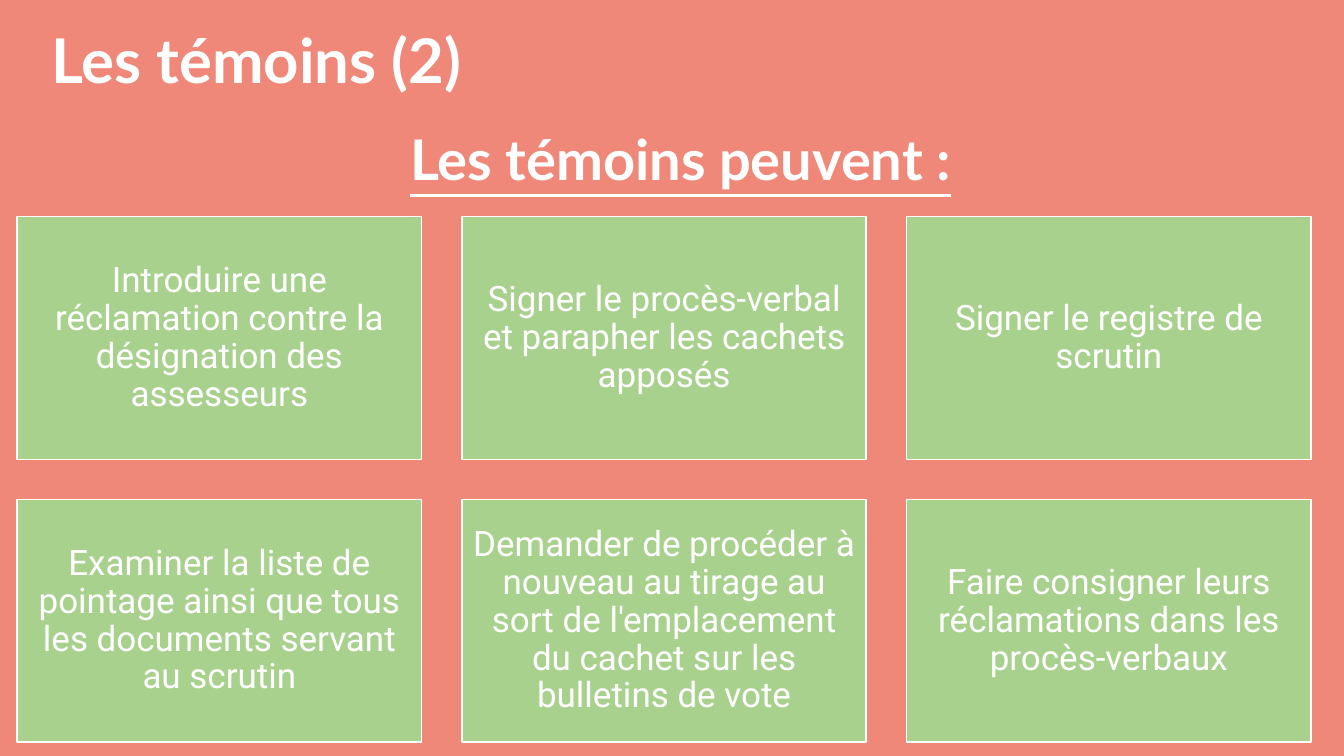
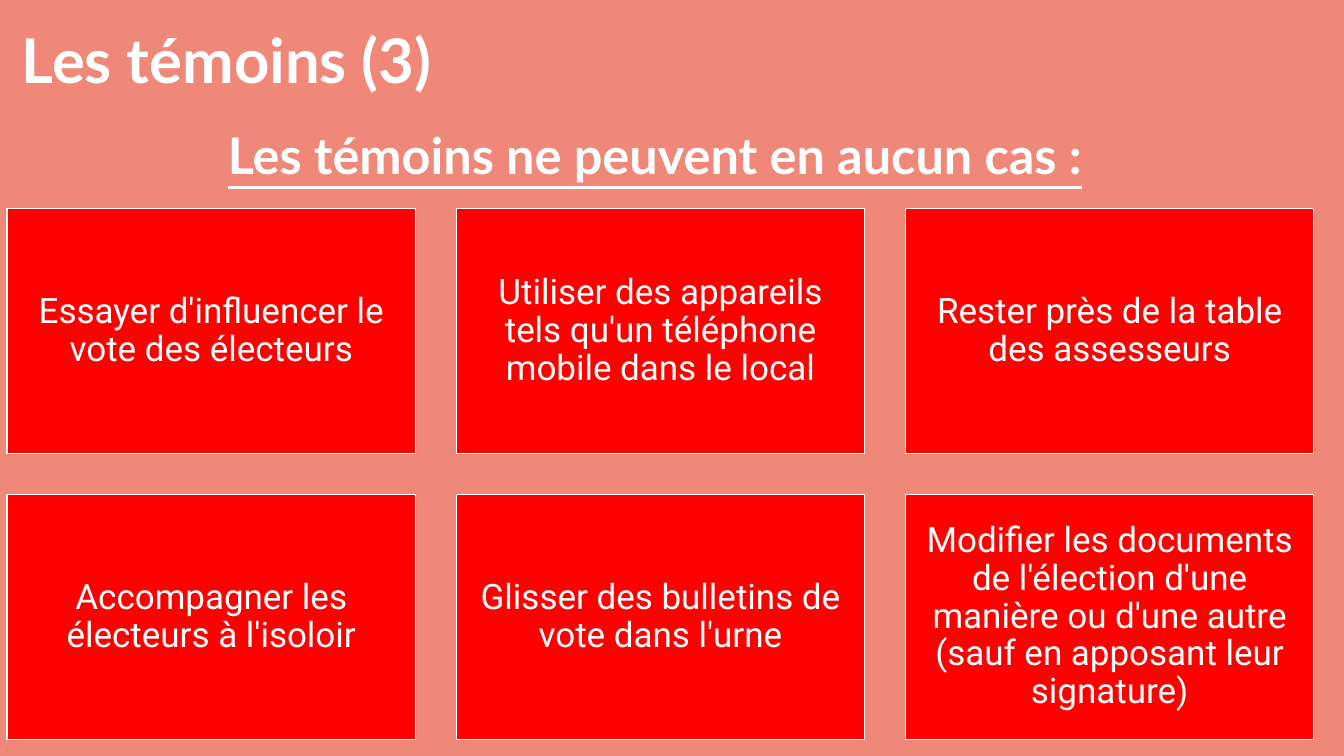
from pptx import Presentation
from pptx.dml.color import RGBColor
from pptx.enum.shapes import MSO_SHAPE
from pptx.enum.text import MSO_ANCHOR, MSO_AUTO_SIZE, PP_ALIGN
from pptx.util import Inches, Pt

RECTANGLE = MSO_SHAPE.RECTANGLE
CENTER = PP_ALIGN.CENTER
BOTTOM, MIDDLE = MSO_ANCHOR.BOTTOM, MSO_ANCHOR.MIDDLE
NO_AUTOFIT = MSO_AUTO_SIZE.NONE

# Shared look
BACKGROUND, WHITE = "EF8879", "FFFFFF"
TITLE_FONT = {"name": "Lato", "size": Pt(44), "bold": True}
HEADING_FONT = {"name": "Lato", "bold": True, "underline": True}
CARD_FONT = {"name": "Roboto", "size": Pt(25)}
COLUMNS = 3
CARD_RATIO = 0.6  # height relative to width
GAP_RATIO = 0.1  # gap relative to width

# Slide content
SLIDES = [
    {
        "title": "Les témoins (2)",
        "title_width": 5.09,
        "heading": "Les témoins peuvent :",
        "heading_box": (0.42, 1.27, 12.66, 0.68),
        "heading_size": 40,
        "heading_spacing": 0.8,
        "card_color": "A9D18E",
        "card_origin": (0.17, 2.15),
        "card_width": 4.01,
        "cards": [
            "Introduire une réclamation contre la désignation des assesseurs",
            "Signer le procès-verbal et parapher les cachets apposés",
            "Signer le registre de scrutin",
            "Examiner la liste de pointage ainsi que tous les documents servant au scrutin",
            "Demander de procéder à nouveau au tirage au sort de l'emplacement du cachet "
            "sur les bulletins de vote",
            "Faire consigner leurs réclamations dans les procès-verbaux",
        ],
    },
    {
        "title": "Les témoins (3)",
        "title_width": 4.5,
        "heading": "Les témoins ne peuvent en aucun cas :",
        "heading_box": (0, 1.1, 12.99, 0.79),
        "heading_size": 36,
        "heading_spacing": 0.9,
        "card_color": "FF0000",
        "card_origin": (0.07, 2.07),
        "card_width": 4.05,
        "cards": [
            "Essayer d'influencer le vote des électeurs",
            "Utiliser des appareils tels qu'un téléphone mobile dans le local",
            "Rester près de la table des assesseurs",
            "Accompagner les électeurs à l'isoloir",
            "Glisser des bulletins de vote dans l'urne",
            "Modifier les documents de l'élection d'une manière ou d'une autre "
            "(sauf en apposant leur signature)",
        ],
    },
]


def color(hex_string):
    return RGBColor.from_string(hex_string)


def write(shape, text, font_format, anchor, line_spacing, space_before=0):
    frame = shape.text_frame
    frame.word_wrap = True
    frame.auto_size = NO_AUTOFIT
    frame.vertical_anchor = anchor
    paragraph = frame.paragraphs[0]
    paragraph.alignment = CENTER
    paragraph.line_spacing = line_spacing
    paragraph.space_before = Pt(space_before)
    run = paragraph.add_run()
    run.text = text
    run.font.color.rgb = color(WHITE)
    for attribute, value in font_format.items():
        setattr(run.font, attribute, value)


presentation = Presentation()
presentation.slide_width = Inches(13.33)
presentation.slide_height = Inches(7.5)
title_only = presentation.slide_layouts.get_by_name("Title Only")

# Background for all slides
background_fill = presentation.slide_master.background.fill
background_fill.solid()
background_fill.fore_color.rgb = color(BACKGROUND)

for content in SLIDES:
    slide = presentation.slides.add_slide(title_only)

    # Title
    title = slide.shapes.title
    title.left, title.top = Inches(0), Inches(0)
    title.width, title.height = Inches(content["title_width"]), Inches(1)
    write(title, content["title"], TITLE_FONT, BOTTOM, Pt(44))

    # Underlined heading
    heading = slide.shapes.add_textbox(*map(Inches, content["heading_box"]))
    heading_font = HEADING_FONT | {"size": Pt(content["heading_size"])}
    write(heading, content["heading"], heading_font, BOTTOM,
          content["heading_spacing"], space_before=10)

    # Grid of cards
    left, top = content["card_origin"]
    width = content["card_width"]
    height = width * CARD_RATIO
    gap = width * GAP_RATIO
    for index, text in enumerate(content["cards"]):
        row, column = divmod(index, COLUMNS)
        card = slide.shapes.add_shape(
            RECTANGLE,
            Inches(left + column * (width + gap)),
            Inches(top + row * (height + gap)),
            Inches(width),
            Inches(height),
        )
        card.shadow.inherit = False
        card.fill.solid()
        card.fill.fore_color.rgb = color(content["card_color"])
        card.line.color.rgb = color(WHITE)
        card.line.width = Pt(1)
        for side in ("left", "top", "right", "bottom"):
            setattr(card.text_frame, f"margin_{side}", Inches(0.1))
        write(card, text, CARD_FONT, MIDDLE, 0.9)

presentation.save("out.pptx")
